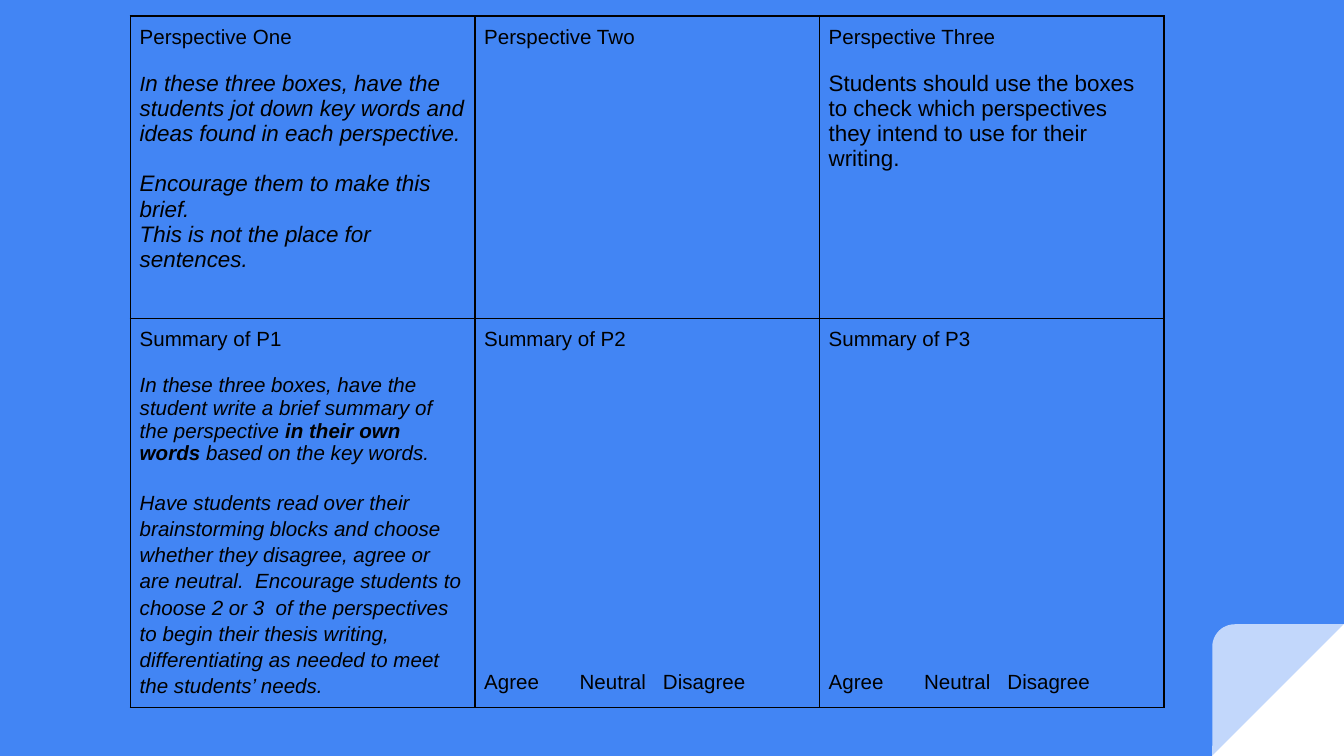
from pptx import Presentation
from pptx.dml.color import RGBColor
from pptx.enum.shapes import MSO_SHAPE
from pptx.oxml.ns import qn
from pptx.util import Inches, Pt
from lxml.etree import SubElement

WIDTH = 10
HEIGHT = WIDTH * 9 / 16
CORNER = 0.98


def rgb(value):
    return RGBColor.from_string(value)


class SlideBuilder:
    font = "Arial"
    ink = "000000"
    paper = "FFFFFF"
    back = "4285F4"
    inset = 0.07

    def __init__(self, prs):
        self.s = prs.slides.add_slide(prs.slide_layouts[6])
        fill = self.s.background.fill
        fill.solid()
        fill.fore_color.rgb = rgb(self.back)

    def corner(self, kind, opacity=100):
        sp = self.s.shapes.add_shape(
            kind, Inches(WIDTH - CORNER), Inches(HEIGHT - CORNER),
            Inches(CORNER), Inches(CORNER))
        sp.shadow.inherit = False
        sp.fill.solid()
        sp.fill.fore_color.rgb = rgb(self.paper)
        sp.line.fill.background()
        sp._element.spPr.find(qn("a:xfrm")).set("flipH", "1")
        if opacity < 100:
            color = sp._element.spPr.find(qn("a:solidFill"))[0]
            SubElement(color, qn("a:alpha"), val=str(opacity * 1000))
        return sp

    def borders(self, cell):
        tcPr = cell._tc.get_or_add_tcPr()
        for side in ("lnL", "lnR", "lnT", "lnB"):
            ln = SubElement(tcPr, qn(f"a:{side}"), w=str(Pt(1)))
            fill = SubElement(ln, qn("a:solidFill"))
            SubElement(fill, qn("a:srgbClr"), val=self.ink)

    def paragraph(self, p, runs, before=0, spacing=None, tabs=()):
        p.space_before = Pt(before)
        if spacing:
            p.line_spacing = spacing
        if tabs:
            tab_list = SubElement(p._p.get_or_add_pPr(), qn("a:tabLst"))
            for pos in tabs:
                SubElement(tab_list, qn("a:tab"), pos=str(Inches(pos)), algn="l")
        for text, size, style in runs:
            r = p.add_run()
            r.text = text
            r.font.name = self.font
            r.font.size = Pt(size)
            r.font.color.rgb = rgb(self.ink)
            r.font.italic = "i" in style
            r.font.bold = "b" in style

    def cell(self, cell, paragraphs):
        cell.margin_left = cell.margin_right = Inches(self.inset)
        cell.margin_top = cell.margin_bottom = Inches(self.inset)
        self.borders(cell)
        cell.fill.background()
        tf = cell.text_frame
        for i, options in enumerate(paragraphs):
            p = tf.paragraphs[0] if i == 0 else tf.add_paragraph()
            self.paragraph(p, **options)

    def table(self, left, top, width, row_heights, rows):
        cols = len(rows[0])
        table = self.s.shapes.add_table(
            len(rows), cols, Inches(left), Inches(top),
            Inches(width), Inches(sum(row_heights))).table
        table.first_row = table.horz_banding = False
        for column in table.columns:
            column.width = Inches(width / cols)
        for row, height, contents in zip(table.rows, row_heights, rows):
            row.height = Inches(height)
            for cell, paragraphs in zip(row.cells, contents):
                self.cell(cell, paragraphs)


def para(*runs, **options):
    return dict(runs=runs, **options)


def heading(text):
    return para((text, 11, ""))


def main():
    prs = Presentation()
    prs.slide_width, prs.slide_height = Inches(WIDTH), Inches(HEIGHT)
    slide = SlideBuilder(prs)
    slide.corner(MSO_SHAPE.RIGHT_TRIANGLE)
    fold = slide.corner(MSO_SHAPE.ROUND_1_RECTANGLE, opacity=68)
    fold.adjustments[0] = 0.17

    choices = para(("Agree\tNeutral\tDisagree", 11, ""), before=171.5, tabs=(0.71, 1.33))
    perspectives = [
        [heading("Perspective One"),
         para(("I", 11, "i"),
              ("n these three boxes, have the students jot down key words and "
               "ideas found in each perspective.", 12, "i"), before=12.3),
         para(("Encourage them to make this brief.", 12, "i"), before=13.4),
         para(("This is not the place for sentences.", 12, "i"))],
        [heading("Perspective Two")],
        [heading("Perspective Three"),
         para(("Students should use the boxes to check which perspectives "
               "they intend to use for their writing.", 12, ""), before=12.3)],
    ]
    summaries = [
        [heading("Summary of P1"),
         para(("In these three boxes, have the student write a brief summary "
               "of the perspective ", 11, "i"),
              ("in their own words ", 11, "ib"),
              ("based on the key words.", 11, "i"), before=12.3),
         para(("Have students read over their brainstorming blocks and choose "
               "whether they disagree, agree or are neutral.  Encourage students "
               "to choose 2 or 3  of the perspectives to begin their thesis "
               "writing, differentiating as needed to meet the students’ needs.",
               11, "i"), before=12.3, spacing=1.15)],
        [heading("Summary of P2"), choices],
        [heading("Summary of P3"), choices],
    ]
    slide.table(0.97, 0.12, 7.69, (2.25, 2.89), [perspectives, summaries])
    prs.save("out.pptx")


if __name__ == "__main__":
    main()
